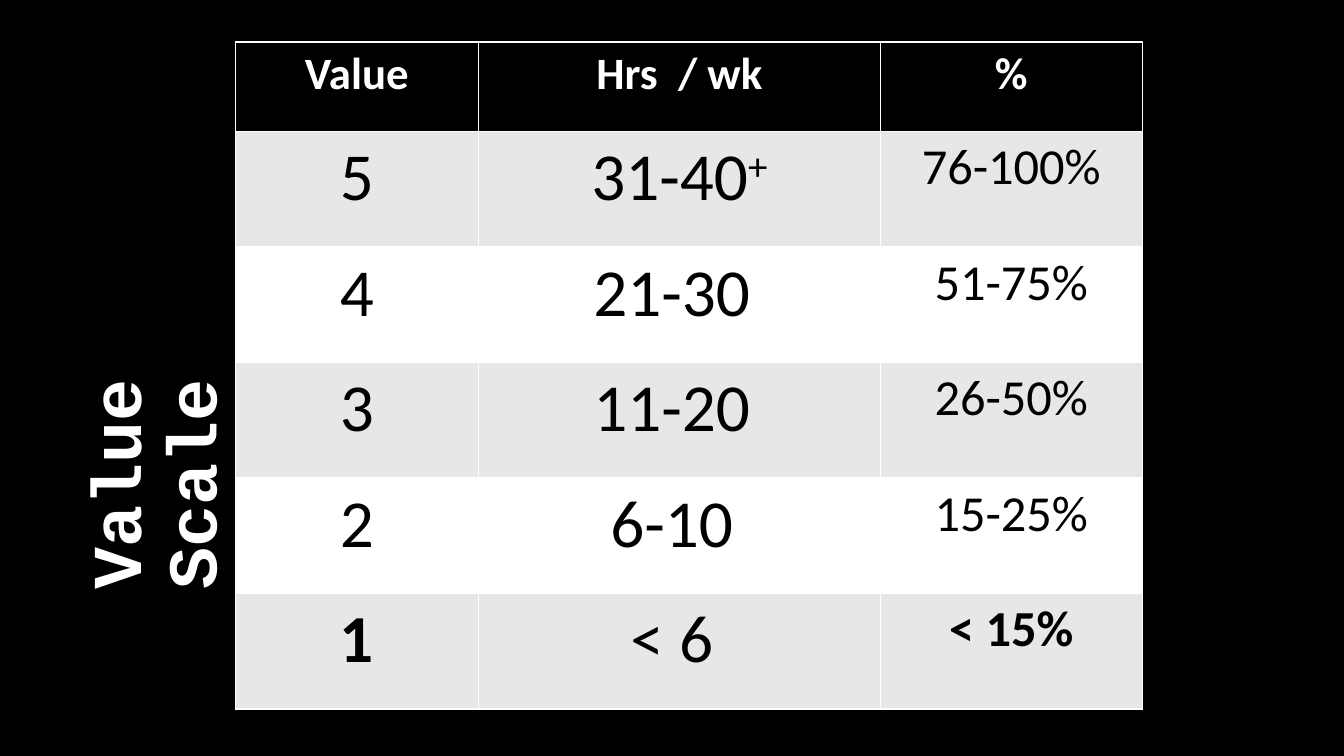
from pptx import Presentation
from pptx.dml.color import RGBColor
from pptx.enum import text
from pptx.oxml import parse_xml
from pptx.oxml.ns import nsdecls
from pptx.util import Pt

HEADER = ["Value", "Hrs  / wk", "%"]
# value, hours per week, raised mark after the hours, share of the week
SCALE = [
    ("5", "31-40", "+", "76-100%"),
    ("4", "21-30 ", "", "51-75%"),
    ("3", "11-20 ", "", "26-50%"),
    ("2", "6-10 ", "", "15-25%"),
    ("1", "< 6 ", "", "< 15%"),
]
TITLE = "Value Scale"

BLACK, WHITE, GREY = "000000", "FFFFFF", "E7E7E7"
TABLE_LEFT, TABLE_TOP = 168, 30
COLUMN_WIDTHS = [173.8, 287, 187.2]
HEADER_HEIGHT, ROW_HEIGHT = 64, 82.5
HEADER_SIZE, COLUMN_SIZES = 32, [48, 48, 36]


def colour(hex_code):
    return RGBColor.from_string(hex_code)


def add_text(paragraph, words, size, color=BLACK, bold=False, font="Calibri", raised=False):
    run = paragraph.add_run()
    run.text = words
    run.font.name = font
    run.font.size = Pt(size)
    run.font.bold = bold
    run.font.color.rgb = colour(color)
    if raised:
        run.font._element.set("baseline", "30000")


def add_borders(cell, color=WHITE, width=1):
    properties = cell._tc.get_or_add_tcPr()
    for position, side in enumerate(("lnL", "lnR", "lnT", "lnB")):
        properties.insert(position, parse_xml(
            f'<a:{side} {nsdecls("a")} w="{Pt(width)}"><a:solidFill>'
            f'<a:srgbClr val="{color}"/></a:solidFill></a:{side}>'))


def prepare_cell(cell, fill):
    """Fill and outline a cell, and return its centred paragraph."""
    cell.fill.solid()
    cell.fill.fore_color.rgb = colour(fill)
    add_borders(cell)
    paragraph = cell.text_frame.paragraphs[0]
    paragraph.alignment = text.PP_ALIGN.CENTER
    return paragraph


def add_scale_table(slide):
    height = HEADER_HEIGHT + ROW_HEIGHT * len(SCALE)
    table = slide.shapes.add_table(
        len(SCALE) + 1, len(HEADER), Pt(TABLE_LEFT), Pt(TABLE_TOP),
        Pt(sum(COLUMN_WIDTHS)), Pt(height)).table
    for column, width in zip(table.columns, COLUMN_WIDTHS):
        column.width = Pt(width)
    for index, row in enumerate(table.rows):
        row.height = Pt(ROW_HEIGHT if index else HEADER_HEIGHT)

    for column, words in enumerate(HEADER):
        paragraph = prepare_cell(table.cell(0, column), BLACK)
        add_text(paragraph, words, HEADER_SIZE, WHITE, bold=True)

    for row, (value, hours, mark, share) in enumerate(SCALE, start=1):
        last = row == len(SCALE)
        for column, words in enumerate((value, hours, share)):
            paragraph = prepare_cell(table.cell(row, column), GREY if row % 2 else WHITE)
            size = COLUMN_SIZES[column]
            add_text(paragraph, words, size, bold=last and column != 1)
            if column == 1 and mark:
                add_text(paragraph, mark, size, raised=True)


def add_title(slide):
    box = slide.shapes.add_textbox(Pt(-75), Pt(237), Pt(320), Pt(62))
    box.rotation = 270
    frame = box.text_frame
    frame.word_wrap = True
    paragraph = frame.paragraphs[0]
    paragraph.line_spacing = 0.9
    add_text(paragraph, TITLE, 50, WHITE, bold=True, font="Courier New")


def main():
    presentation = Presentation()
    presentation.slide_width, presentation.slide_height = Pt(960), Pt(540)
    slide = presentation.slides.add_slide(presentation.slide_layouts[6])
    slide.background.fill.solid()
    slide.background.fill.fore_color.rgb = colour(BLACK)
    add_scale_table(slide)
    add_title(slide)
    presentation.save("out.pptx")


if __name__ == "__main__":
    main()
